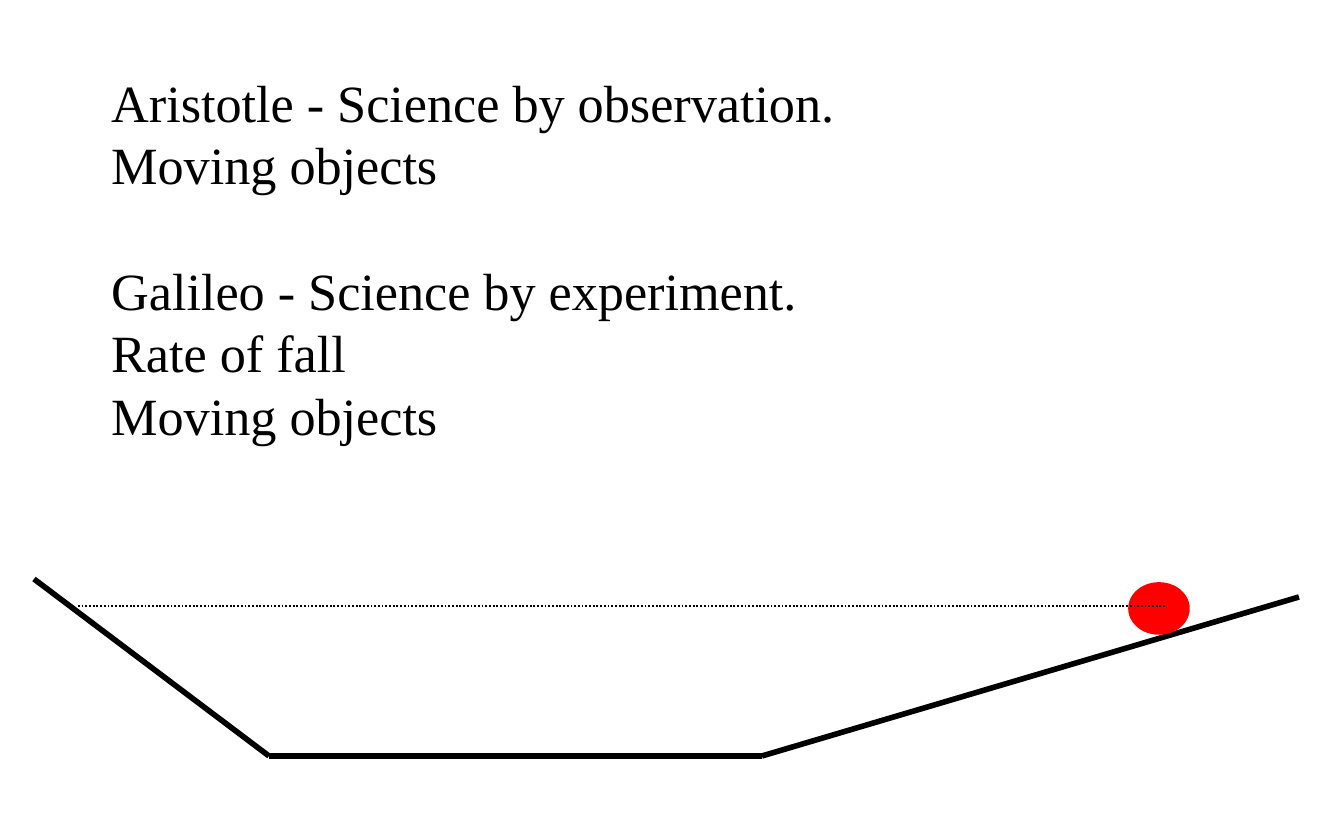
from pptx import Presentation
from pptx.dml.color import RGBColor
from pptx.enum.dml import MSO_LINE
from pptx.enum.shapes import MSO_CONNECTOR, MSO_SHAPE
from pptx.oxml.ns import qn
from pptx.util import Emu, Pt
from lxml import etree

LINE, OVAL, DOT = MSO_CONNECTOR.STRAIGHT, MSO_SHAPE.OVAL, MSO_LINE.ROUND_DOT
SCALE = 914400 / 134.4
WIDE, HIGH = 1344, 840
FONT, SIZE, PITCH = "Times New Roman", 28, 33.6
BLACK, RED = "000000", "FF0000"

GROUPS = [
    ["Aristotle - Science by observation.", "Moving objects"],
    ["Galileo - Science by experiment.", "Rate of fall", "Moving objects"],
]
TEXT = (98, 60, 1156, 394)
TRACK = [(34, 579), (269, 756), (762, 756), (1299, 597)]
BALL = (1131, 585, 56, 47)
LEVEL = [(1165, 606), (78, 606)]


def px(num):
    """Turn px into EMU."""
    return Emu(round(num * SCALE))


def tint(code):
    """Turn a hex string into a colour."""
    return RGBColor.from_string(code)


def stroke(line, code, width):
    """Set the colour and width of a line."""
    line.color.rgb = tint(code)
    line.width = Pt(width)


def link(slide, start, end, width):
    """Draw a black line without a shadow."""
    item = slide.shapes.add_connector(LINE, *map(px, start + end))
    stroke(item.line, BLACK, width)
    etree.SubElement(item._element.spPr, qn("a:effectLst"))
    return item


def write(slide):
    """Add the groups of text lines, one line apart."""
    frame = slide.shapes.add_textbox(*map(px, TEXT)).text_frame
    frame.word_wrap = True
    frame.margin_top = px(10)
    para = frame.paragraphs[0]
    for g, group in enumerate(GROUPS):
        for n, words in enumerate(group):
            if g or n:
                para = frame.add_paragraph()
            para.line_spacing = Pt(PITCH)
            if g and not n:
                para.space_before = Pt(PITCH)
            run = para.add_run()
            run.text = words
            run.font.name, run.font.size = FONT, Pt(SIZE)
            run.font.color.rgb = tint(BLACK)


def main():
    """Build the slide."""
    deck = Presentation()
    deck.slide_width, deck.slide_height = px(WIDE), px(HIGH)
    slide = deck.slides.add_slide(deck.slide_layouts[6])
    write(slide)
    for start, end in zip(TRACK, TRACK[1:]):
        link(slide, start, end, 3)
    ball = slide.shapes.add_shape(OVAL, *map(px, BALL))
    ball.shadow.inherit = False
    ball.fill.solid()
    ball.fill.fore_color.rgb = tint(RED)
    stroke(ball.line, RED, 3)
    link(slide, *LEVEL, 1).line.dash_style = DOT
    deck.save("out.pptx")


if __name__ == "__main__":
    main()
